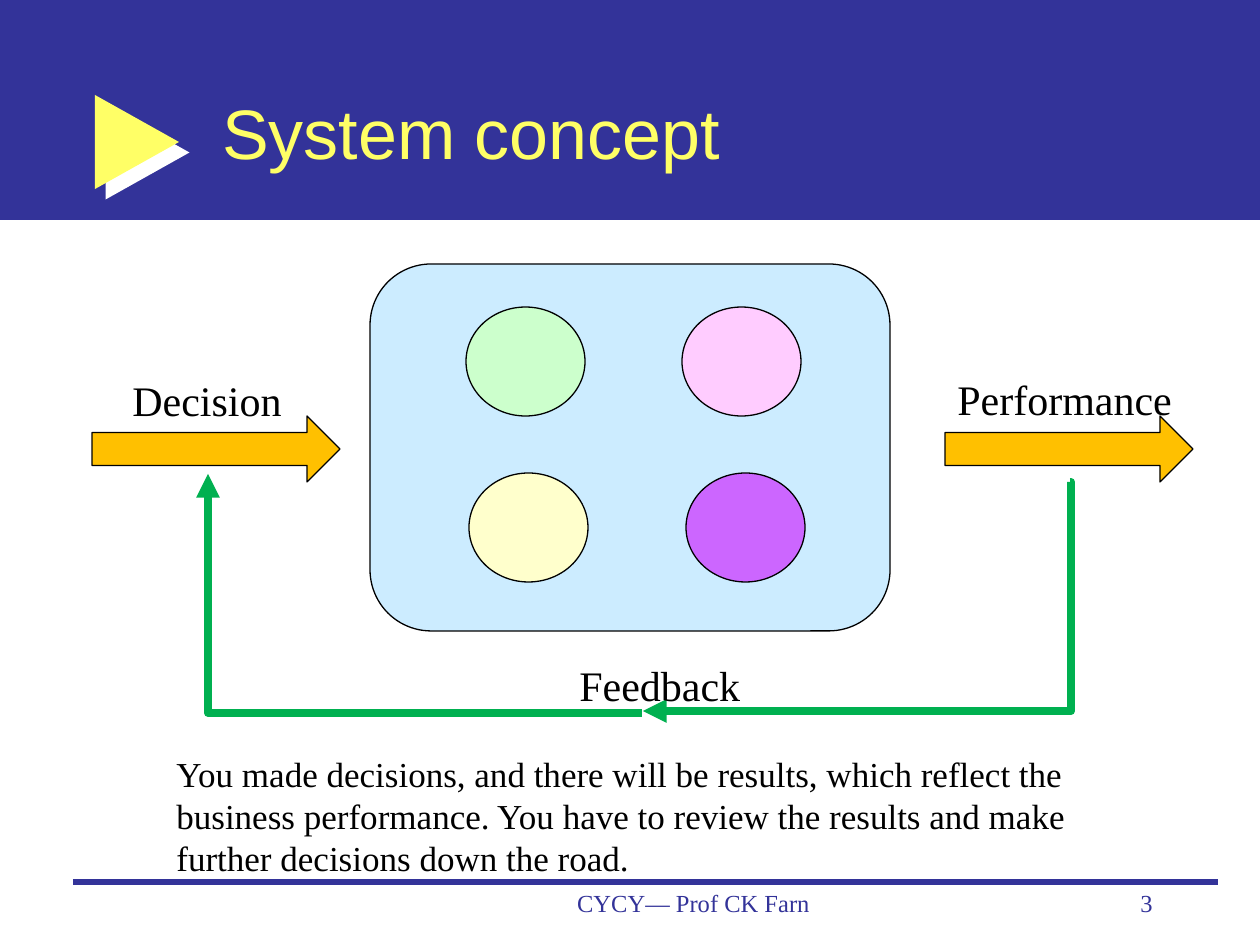
from lxml import etree
from pptx import Presentation
from pptx.dml.color import RGBColor
from pptx.enum.shapes import MSO_CONNECTOR as Line, MSO_SHAPE as Shape
from pptx.enum.text import MSO_ANCHOR as Anchor, PP_ALIGN as Align
from pptx.oxml import parse_xml
from pptx.oxml.ns import nsdecls, qn
from pptx.util import Emu, Pt

PX = 914400 / 126  # EMU per pixel

NAVY = RGBColor(0x33, 0x33, 0x99)
YELLOW = RGBColor(0xFF, 0xFF, 0x66)
BLACK = RGBColor(0x00, 0x00, 0x00)
SKY = RGBColor(0xCC, 0xEC, 0xFF)
MINT = RGBColor(0xCC, 0xFF, 0xCC)
PINK = RGBColor(0xFF, 0xCC, 0xFF)
CREAM = RGBColor(0xFF, 0xFF, 0xCC)
PURPLE = RGBColor(0xCC, 0x66, 0xFF)
ORANGE = RGBColor(0xFF, 0xC0, 0x00)
GREEN = RGBColor(0x00, 0xB0, 0x50)
SERIF = "Times New Roman"

deck = Presentation()
deck.slide_width, deck.slide_height = Emu(round(1260 * PX)), Emu(round(945 * PX))
page = deck.slides.add_slide(deck.slide_layouts[6])


def add_shape(kind, place, fill, outlined=True):
    shape = page.shapes.add_shape(kind, *[Emu(round(n * PX)) for n in place])
    shape.shadow.inherit = False
    shape.fill.solid()
    shape.fill.fore_color.rgb = fill
    if outlined:
        shape.line.color.rgb = BLACK
        shape.line.width = Pt(0.75)
    else:
        shape.line.fill.background()
    return shape


def add_line(kind, ends, color, width):
    line = page.shapes.add_connector(kind, *[Emu(round(n * PX)) for n in ends])
    line.line.color.rgb = color
    line.line.width = Pt(width)
    etree.SubElement(line._element.spPr, qn("a:effectLst"))
    return line


# Header band, triangle marker with its hard white shadow, footer rule
add_shape(Shape.RECTANGLE, (0, 0, 1260, 220), NAVY, outlined=False)
marker = add_shape(Shape.RIGHT_ARROW, (95, 95, 84, 94), YELLOW, outlined=False)
marker.adjustments[0] = 0.38
marker.adjustments[1] = 1
marker._element.spPr.find(qn("a:effectLst")).append(parse_xml(
    f'<a:outerShdw {nsdecls("a")} dist="107950" dir="2700000" algn="ctr" rotWithShape="0">'
    '<a:srgbClr val="FFFFFF"/></a:outerShdw>'))
add_line(Line.STRAIGHT, (73, 882, 1218, 882), NAVY, 3)

# System box with its four parts
add_shape(Shape.ROUNDED_RECTANGLE, (370, 264, 520, 367), SKY)
for left, top, color in [(466, 307, MINT), (682, 307, PINK),
                         (469, 473, CREAM), (686, 473, PURPLE)]:
    add_shape(Shape.OVAL, (left, top, 119, 109), color)

# Input and output arrows
for left in (92, 945):
    add_shape(Shape.RIGHT_ARROW, (left, 416, 248, 66), ORANGE)

# Feedback loop: from performance back to decision
for ends, bend in [((1070, 482, 643, 711), -300), ((642, 713, 208, 474), 100000)]:
    elbow = add_line(Line.ELBOW, ends, GREEN, 4.5)
    guides = elbow._element.spPr.find(qn("a:prstGeom")).get_or_add_avLst()
    etree.SubElement(guides, qn("a:gd"), name="adj1", fmla=f"val {bend}")
    etree.SubElement(elbow.line._get_or_add_ln(), qn("a:tailEnd"), type="triangle")

# Texts: wording, place, size, font, color, alignment, anchor, wrap
texts = [
    ("System concept", (210, 53, 955, 158), 40, "Arial", YELLOW, Align.LEFT, Anchor.MIDDLE, True),
    ("CYCY— Prof CK Farn", (494, 882, 399, 63), 14, SERIF, NAVY, Align.CENTER, Anchor.TOP, True),
    ("3", (903, 882, 262, 63), 14, SERIF, NAVY, Align.RIGHT, Anchor.TOP, True),
    ("Decision", (120, 368, 176, 63), 24, SERIF, BLACK, Align.LEFT, Anchor.TOP, False),
    ("Performance", (945, 367, 242, 63), 24, SERIF, BLACK, Align.LEFT, Anchor.TOP, False),
    ("Feedback", (567, 653, 188, 63), 24, SERIF, BLACK, Align.LEFT, Anchor.TOP, False),
    ("You made decisions, and there will be results, which reflect the business "
     "performance. You have to review the results and make further decisions "
     "down the road.",
     (164, 746, 955, 140), 20, SERIF, BLACK, Align.LEFT, Anchor.TOP, True),
]
for wording, place, size, face, color, align, anchor, wrap in texts:
    box = page.shapes.add_textbox(*[Emu(round(n * PX)) for n in place])
    frame = box.text_frame
    frame.word_wrap = wrap
    frame.vertical_anchor = anchor
    frame.text = wording
    para = frame.paragraphs[0]
    para.alignment = align
    span = para.runs[0]
    span.font.size = Pt(size)
    span.font.name = face
    span.font.color.rgb = color

deck.save("out.pptx")
